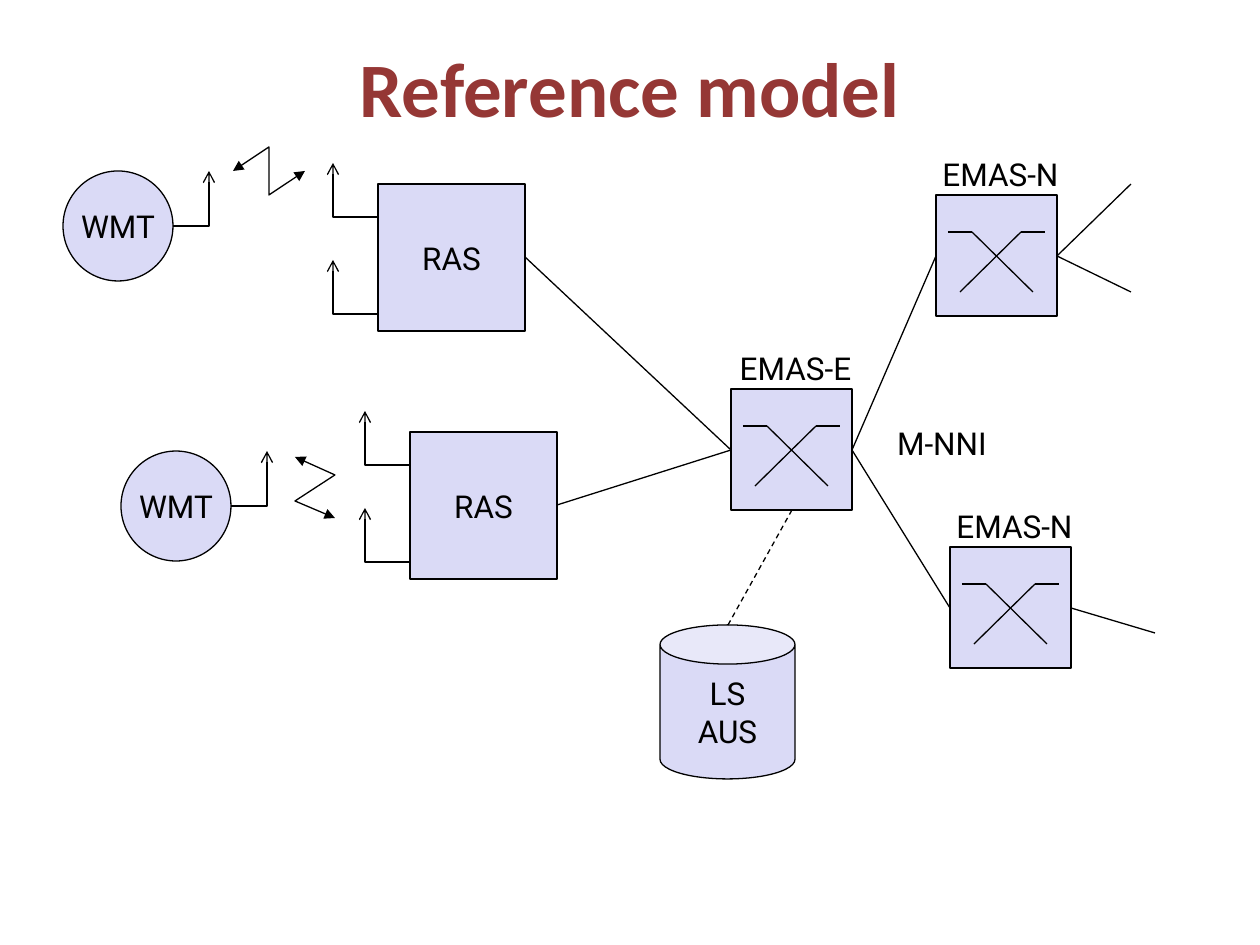
"""Build the wireless access reference model slide."""
from dataclasses import dataclass

from lxml import etree
from pptx import Presentation
from pptx import util as u
from pptx.dml.color import RGBColor
from pptx.enum import dml, shapes, text
from pptx.oxml.ns import qn

PX = 914400 / 126


def emu(*lengths):
    return [u.Emu(round(length * PX)) for length in lengths]


@dataclass(frozen=True)
class Theme:
    ink: RGBColor = RGBColor(0x00, 0x00, 0x00)
    node: RGBColor = RGBColor(0xDA, 0xDA, 0xF6)
    heading: RGBColor = RGBColor(0x95, 0x37, 0x35)
    heading_font: str = "Calibri"
    label_font: str = "Roboto"
    heading_size: int = 44
    label_size: int = 18
    line_width: float = 0.75


class Diagram:
    def __init__(self, slide, theme):
        self.slide = slide
        self.theme = theme

    def caption(self, frame, wording, heading=False):
        t = self.theme
        frame.text = wording
        frame.word_wrap = heading
        frame.vertical_anchor = text.MSO_ANCHOR.MIDDLE
        for paragraph in frame.paragraphs:
            paragraph.alignment = text.PP_ALIGN.CENTER
            for run in paragraph.runs:
                run.font.name = t.heading_font if heading else t.label_font
                run.font.size = u.Pt(t.heading_size if heading else t.label_size)
                run.font.color.rgb = t.heading if heading else t.ink
                run.font.bold = heading

    def label(self, wording, left, top, width, height, heading=False):
        box = self.slide.shapes.add_textbox(*emu(left, top, width, height))
        self.caption(box.text_frame, wording, heading)

    def outline(self, item, dashed=False, **ends):
        item.line.color.rgb = self.theme.ink
        item.line.width = u.Pt(self.theme.line_width)
        if dashed:
            item.line.dash_style = dml.MSO_LINE.DASH
        ln = item._element.spPr.find(qn("a:ln"))
        for end, kind in ends.items():
            etree.SubElement(ln, qn(f"a:{end}End"), type=kind)

    def node(self, kind, left, top, width, height, wording=""):
        shape = self.slide.shapes.add_shape(kind, *emu(left, top, width, height))
        shape.shadow.inherit = False
        shape.fill.solid()
        shape.fill.fore_color.rgb = self.theme.node
        self.outline(shape)
        if wording:
            self.caption(shape.text_frame, wording)
        return shape

    def link(self, start, end, kind=shapes.MSO_CONNECTOR.STRAIGHT, **style):
        connector = self.slide.shapes.add_connector(kind, *emu(*start, *end))
        self.outline(connector, **style)
        etree.SubElement(connector._element.spPr, qn("a:effectLst"))
        return connector

    def antenna(self, base, tip):
        mast = self.link(base, tip, shapes.MSO_CONNECTOR.ELBOW, tail="arrow")
        mast._element.spPr.find(qn("a:prstGeom")).set("prst", "bentConnector2")

    def radio(self, start, *bends):
        builder = self.slide.shapes.build_freeform(*start, scale=PX)
        builder.add_line_segments(bends, close=False)
        wave = builder.convert_to_shape()
        wave.shadow.inherit = False
        wave.fill.background()
        self.outline(wave, head="triangle", tail="triangle")

    def terminal(self, left, top, size=110):
        self.node(shapes.MSO_SHAPE.OVAL, left, top, size, size, "WMT")
        right = left + size
        self.antenna((right, top + size // 2), (right + 36, top))

    def station(self, left, top, size=147):
        for drop in (33, 130):
            base = left + 4, top + drop
            self.antenna(base, (base[0] - 49, base[1] - 54))
        self.node(shapes.MSO_SHAPE.RECTANGLE, left, top, size, size, "RAS")
        return left + size, top + size // 2

    def switch(self, wording, left, top, size=121):
        self.label(wording, left - 9, top - 46, 147, 50)
        self.node(shapes.MSO_SHAPE.RECTANGLE, left, top, size, size)
        for x1, y1, x2, y2 in ((12, 37, 36, 37), (36, 37, 97, 97),
                               (85, 37, 109, 37), (85, 37, 24, 97)):
            self.link((left + x1, top + y1), (left + x2, top + y2))
        middle = top + size // 2 + 1
        return (left, middle), (left + size, middle), (left + size // 2 + 1, top + size)


def main():
    deck = Presentation()
    deck.slide_width, deck.slide_height = emu(1260, 945)
    diagram = Diagram(deck.slides.add_slide(deck.slide_layouts[6]), Theme())

    diagram.label("Reference model", 63, 38, 1134, 98, heading=True)

    diagram.terminal(63, 171)
    diagram.terminal(121, 451)
    diagram.radio((233, 171), (269, 147), (269, 195), (305, 171))
    diagram.radio((295, 457), (335, 475), (295, 501), (335, 518))
    stations = [diagram.station(378, 184), diagram.station(410, 432)]

    edge_in, edge_out, edge_base = diagram.switch("EMAS-E", 731, 389)
    upper_in, upper_out, _ = diagram.switch("EMAS-N", 936, 195)
    lower_in, lower_out, _ = diagram.switch("EMAS-N", 950, 547)
    diagram.label("M-NNI", 884, 418, 116, 50)

    for station in stations:
        diagram.link(station, edge_in)
    for network_in in (upper_in, lower_in):
        diagram.link(edge_out, network_in)
    for port, far_end in ((upper_out, (1131, 184)), (upper_out, (1131, 292)),
                          (lower_out, (1155, 633))):
        diagram.link(port, far_end)

    servers = diagram.node(shapes.MSO_SHAPE.CAN, 660, 625, 135, 154, "LS\nAUS")
    servers.adjustments[0] = 0.29
    diagram.link((728, 625), edge_base, dashed=True)

    deck.save("out.pptx")


if __name__ == "__main__":
    main()
